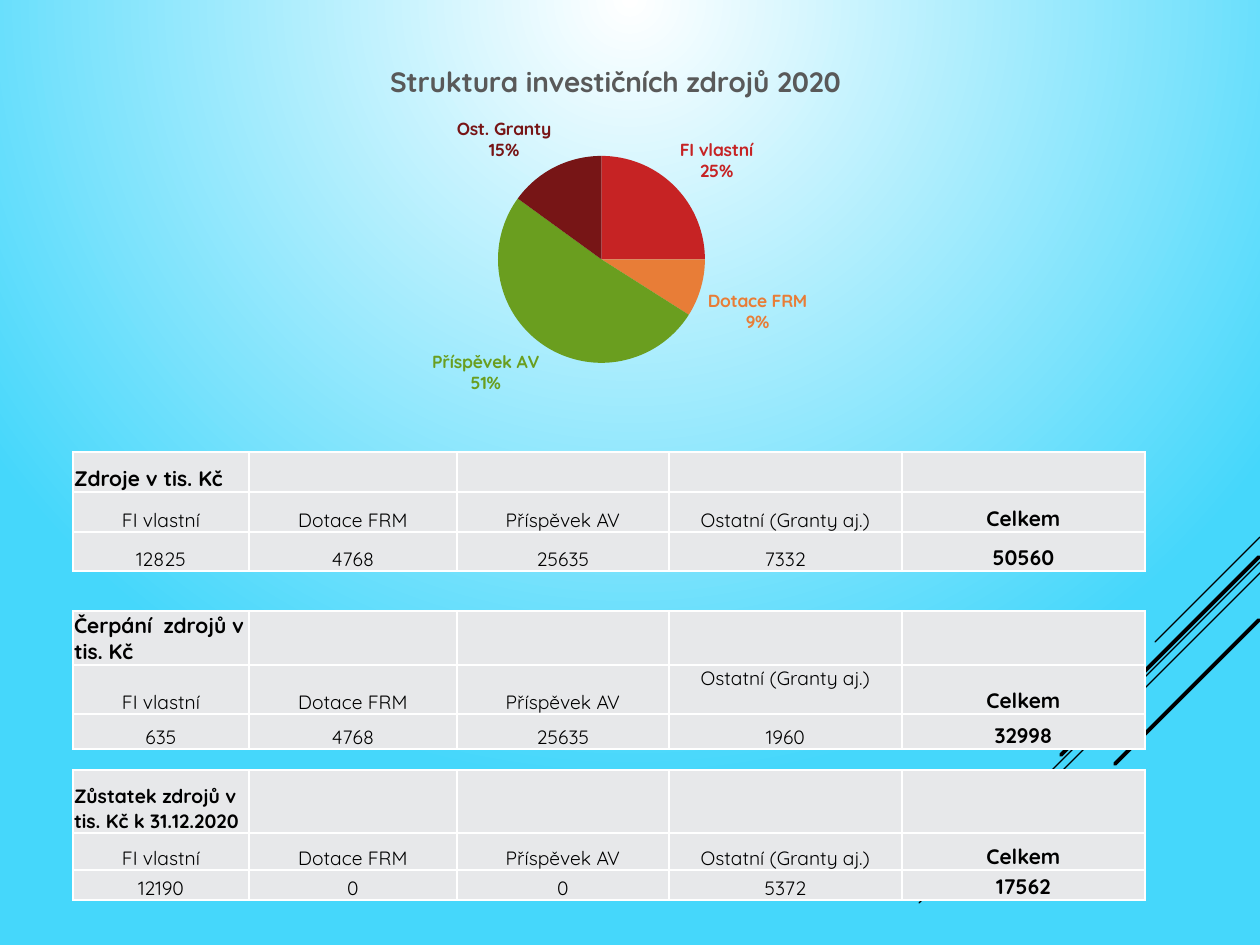
from dataclasses import dataclass

import lxml.etree
import pptx
import pptx.chart.data
import pptx.dml.color
import pptx.enum.chart
import pptx.enum.shapes
import pptx.enum.text
import pptx.oxml
import pptx.oxml.ns
import pptx.util

PX_PER_INCH = 126
qn = pptx.oxml.ns.qn


@dataclass(frozen=True)
class Theme:
    font: str = "Quicksand"
    black: str = "000000"
    white: str = "FFFFFF"
    sky: str = "45D7FB"
    cell: str = "E7E8EA"
    title: str = "595959"
    slices: tuple = ("C62324", "E87D37", "6A9E1F", "771516")
    title_size: int = 16
    strong_size: int = 12
    body_size: int = 11
    label_size: int = 10
    border: int = 1


def px(length):
    return pptx.util.Emu(round(length * 914400 / PX_PER_INCH))


def rgb(color):
    return pptx.dml.color.RGBColor.from_string(color)


class SlideBuilder:
    def __init__(self, presentation, theme):
        self.theme = theme
        self.slide = presentation.slides.add_slide(presentation.slide_layouts[6])

    def style_font(self, font, size, color, bold=False):
        font.name = self.theme.font
        font.size = pptx.util.Pt(size)
        font.bold = bold
        font.color.rgb = rgb(color)

    def background(self):
        stops = "".join(
            f'<a:gs pos="{position}"><a:srgbClr val="{color}"/></a:gs>'
            for position, color in ((0, self.theme.white), (100000, self.theme.sky)))
        self.slide.element.cSld.insert(0, pptx.oxml.parse_xml(
            f'<p:bg {pptx.oxml.ns.nsdecls("p", "a")}><p:bgPr>'
            f'<a:gradFill rotWithShape="1"><a:gsLst>{stops}</a:gsLst>'
            '<a:path path="circle"><a:fillToRect b="100000"/></a:path></a:gradFill>'
            '<a:effectLst/></p:bgPr></p:bg>'))

    def line(self, start, end, width):
        connector = self.slide.shapes.add_connector(
            pptx.enum.shapes.MSO_CONNECTOR.STRAIGHT, *map(px, start + end))
        connector.line.color.rgb = rgb(self.theme.black)
        connector.line.width = pptx.util.Pt(width)
        connector.line._get_or_add_ln().set("cap", "rnd")
        lxml.etree.SubElement(connector._element.spPr, qn("a:effectLst"))

    def cell_borders(self, cell):
        properties = cell._tc.get_or_add_tcPr()
        for index, side in enumerate(("lnL", "lnR", "lnT", "lnB")):
            properties.insert(index, pptx.oxml.parse_xml(
                f'<a:{side} {pptx.oxml.ns.nsdecls("a")} w="{pptx.util.Pt(self.theme.border)}">'
                f'<a:solidFill><a:srgbClr val="{self.theme.white}"/></a:solidFill></a:{side}>'))

    def cell(self, cell, text, size, bold, centered):
        cell.fill.solid()
        cell.fill.fore_color.rgb = rgb(self.theme.cell)
        cell.margin_left = cell.margin_right = cell.margin_top = px(1)
        cell.margin_bottom = 0
        cell.vertical_anchor = pptx.enum.text.MSO_ANCHOR.BOTTOM
        cell.text = text
        paragraph = cell.text_frame.paragraphs[0]
        if centered:
            paragraph.alignment = pptx.enum.text.PP_ALIGN.CENTER
        self.style_font(paragraph.font, size, self.theme.black, bold)
        self.cell_borders(cell)

    def table(self, left, top, columns, heights, rows, heading_size):
        table = self.slide.shapes.add_table(
            len(rows), len(columns), px(left), px(top),
            px(sum(columns)), px(sum(heights))).table
        table.first_row = table.horz_banding = False
        for column, width in zip(table.columns, columns):
            column.width = px(width)
        for row, height in zip(table.rows, heights):
            row.height = px(height)
        for row_index, row in enumerate(rows):
            for column_index, text in enumerate(row):
                heading = row_index == 0
                total = column_index == len(columns) - 1
                size = (heading_size if heading else
                        self.theme.strong_size if total else self.theme.body_size)
                self.cell(table.cell(row_index, column_index), text, size,
                          heading or total, not heading)
        return table

    def chart_layout(self, element, index, **values):
        for layout in element.findall(qn("c:layout")):
            element.remove(layout)
        layout = lxml.etree.Element(qn("c:layout"))
        manual = lxml.etree.SubElement(layout, qn("c:manualLayout"))
        if "w" in values:
            lxml.etree.SubElement(manual, qn("c:layoutTarget")).set("val", "inner")
        for name in ("xMode", "yMode"):
            lxml.etree.SubElement(manual, qn(f"c:{name}")).set("val", "edge")
        for name, value in values.items():
            lxml.etree.SubElement(manual, qn(f"c:{name}")).set("val", str(value))
        element.insert(index, layout)

    def pie(self, left, top, width, height, title, title_at, pie_box, categories, values):
        data = pptx.chart.data.CategoryChartData()
        data.categories = categories
        data.add_series("Series 1", values)
        chart = self.slide.shapes.add_chart(
            pptx.enum.chart.XL_CHART_TYPE.PIE,
            px(left), px(top), px(width), px(height), data).chart
        self.style_font(chart.font, self.theme.label_size, self.theme.black)
        chart.has_legend = False
        chart.has_title = True
        chart.chart_title.text_frame.text = title
        self.style_font(chart.chart_title.text_frame.paragraphs[0].font,
                        self.theme.title_size, self.theme.title, True)
        chart.plots[0].vary_by_categories = True
        series = chart.plots[0].series[0]
        for index, color in enumerate(self.theme.slices):
            point = series.points[index]
            point.format.fill.solid()
            point.format.fill.fore_color.rgb = rgb(color)
            point.format.line.fill.background()
            self.style_font(point.data_label.font, self.theme.label_size, color, True)
            point.data_label.position = pptx.enum.chart.XL_LABEL_POSITION.OUTSIDE_END
        for name, value in (("showVal", "0"), ("showCatName", "1"), ("showPercent", "1")):
            for flag in series._element.iter(qn(f"c:{name}")):
                flag.set("val", value)
        for label in series._element.iter(qn("c:dLbl")):
            lxml.etree.SubElement(label, qn("c:separator")).text = "\n"
        chart_element = chart._chartSpace.chart
        self.chart_layout(chart_element.find(qn("c:title")), 1,
                          x=(title_at[0] - left) / width, y=(title_at[1] - top) / height)
        box_left, box_top, diameter = pie_box
        self.chart_layout(chart_element.plotArea, 0,
                          x=(box_left - left) / width, y=(box_top - top) / height,
                          w=diameter / width, h=diameter / height)


def main():
    presentation = pptx.Presentation()
    presentation.slide_width = px(1260)
    presentation.slide_height = px(945)
    theme = Theme()
    builder = SlideBuilder(presentation, theme)
    builder.background()

    for right, top, run, width in (
            (1260, 537, 105, 0.75), (1260, 562, 341, 0.75), (1260, 573, 217, 0.75),
            (1259, 557, 198, 2.25), (1259, 620, 144, 2.25)):
        builder.line((right, top), (right - run, top + run), width)

    left = 73
    columns = (176, 208, 212, 233, 243)
    sources = ("FI vlastní", "Dotace FRM", "Příspěvek AV", "Ostatní (Granty aj.)", "Celkem")
    tables = (
        ("Zůstatek zdrojů v tis. Kč k 31.12.2020", 770, (63, 37, 30), theme.body_size,
         ("12190", "0", "0", "5372", "17562")),
        ("Zdroje v tis. Kč", 452, (40, 40, 39), theme.strong_size,
         ("12825", "4768", "25635", "7332", "50560")),
        ("Čerpání  zdrojů v tis. Kč", 611, (54, 49, 35), theme.strong_size,
         ("635", "4768", "25635", "1960", "32998")),
    )
    for heading, top, heights, heading_size, amounts in tables:
        rows = ((heading, "", "", "", ""), sources, amounts)
        table = builder.table(left, top, columns, heights, rows, heading_size)
    table.cell(1, 3).vertical_anchor = pptx.enum.text.MSO_ANCHOR.TOP

    builder.pie(left, 37, sum(columns), 380, "Struktura investičních zdrojů 2020",
                (385, 57), (498, 156, 207),
                ("FI vlastní", "Dotace FRM", "Příspěvek AV", "Ost. Granty"), (25, 9, 51, 15))
    presentation.save("out.pptx")


if __name__ == "__main__":
    main()
